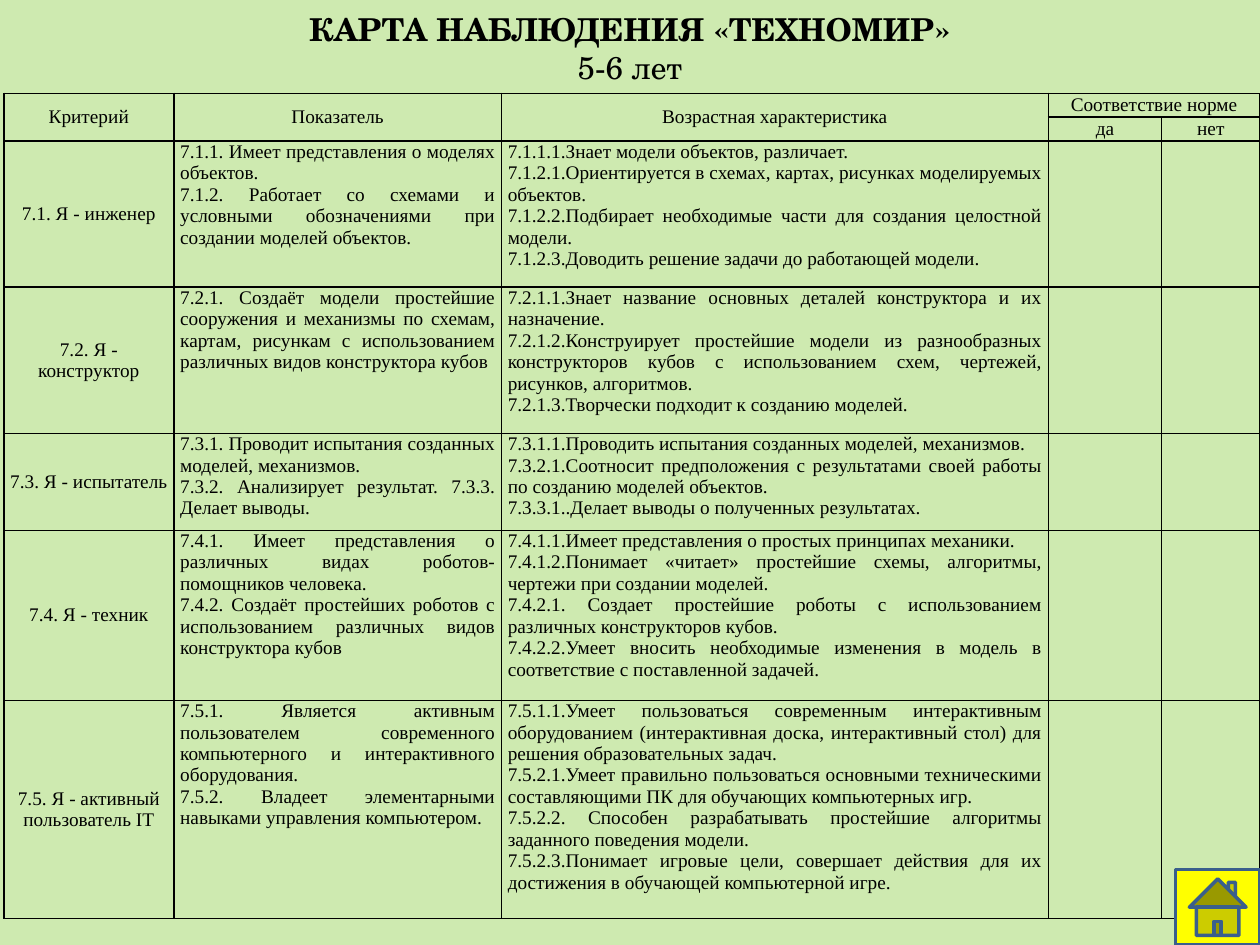
from lxml import etree
from pptx import Presentation
from pptx.dml.color import RGBColor
from pptx.enum.shapes import MSO_SHAPE
from pptx.enum.text import MSO_ANCHOR, PP_ALIGN
from pptx.oxml.ns import qn
from pptx.util import Inches, Pt

CENTER, JUSTIFY = PP_ALIGN.CENTER, PP_ALIGN.JUSTIFY
TOP, MIDDLE = MSO_ANCHOR.TOP, MSO_ANCHOR.MIDDLE
HOME_BUTTON = MSO_SHAPE.ACTION_BUTTON_HOME

TITLE_FONT, TABLE_FONT = "TeX Gyre Schola", "Times New Roman"
BLACK, LIGHT_GREEN, YELLOW, BLUE = "000000", "CEEAB0", "FFFF00", "3A5F8C"

TITLE = ["КАРТА НАБЛЮДЕНИЯ «ТЕХНОМИР»", "5-6 лет"]
HEADINGS = ["Критерий", "Показатель", "Возрастная характеристика"]
NORM, ANSWERS = "Соответствие норме", ["да", "нет"]

# criterion, indicators, age characteristics
CRITERIA = [
    ("7.1. Я - инженер",
     ["7.1.1. Имеет представления о моделях объектов.",
      "7.1.2. Работает со схемами и условными обозначениями при создании "
      "моделей объектов."],
     ["7.1.1.1.Знает модели объектов, различает.",
      "7.1.2.1.Ориентируется в схемах, картах, рисунках моделируемых объектов.",
      "7.1.2.2.Подбирает необходимые части для создания целостной модели.",
      "7.1.2.3.Доводить решение задачи до работающей модели."]),
    ("7.2. Я - конструктор",
     ["7.2.1. Создаёт модели простейшие сооружения и механизмы по схемам, "
      "картам, рисункам с использованием различных видов конструктора кубов"],
     ["7.2.1.1.Знает название основных деталей конструктора и их назначение.",
      "7.2.1.2.Конструирует простейшие модели из разнообразных конструкторов "
      "кубов с использованием схем, чертежей, рисунков, алгоритмов.",
      "7.2.1.3.Творчески подходит к созданию моделей."]),
    ("7.3. Я - испытатель",
     ["7.3.1. Проводит испытания созданных моделей, механизмов.",
      "7.3.2. Анализирует результат. 7.3.3. Делает выводы."],
     ["7.3.1.1.Проводить испытания созданных моделей, механизмов.",
      "7.3.2.1.Соотносит предположения с результатами своей работы по "
      "созданию моделей объектов.",
      "7.3.3.1..Делает выводы о полученных результатах."]),
    ("7.4. Я - техник",
     ["7.4.1. Имеет представления о различных видах роботов-помощников человека.",
      "7.4.2. Создаёт простейших роботов с использованием различных видов "
      "конструктора кубов"],
     ["7.4.1.1.Имеет представления о простых принципах механики.",
      "7.4.1.2.Понимает «читает» простейшие схемы, алгоритмы, чертежи при "
      "создании моделей.",
      "7.4.2.1. Создает простейшие роботы с использованием различных "
      "конструкторов кубов.",
      "7.4.2.2.Умеет вносить необходимые изменения в модель в соответствие "
      "с поставленной задачей."]),
    ("7.5. Я - активный пользователь IT",
     ["7.5.1. Является активным пользователем современного компьютерного и "
      "интерактивного оборудования.",
      "7.5.2. Владеет элементарными навыками управления компьютером."],
     ["7.5.1.1.Умеет пользоваться современным интерактивным оборудованием "
      "(интерактивная доска, интерактивный стол) для решения образовательных "
      "задач.",
      "7.5.2.1.Умеет правильно пользоваться основными техническими "
      "составляющими ПК для обучающих компьютерных игр.",
      "7.5.2.2. Способен разрабатывать простейшие алгоритмы заданного "
      "поведения модели.",
      "7.5.2.3.Понимает игровые цели, совершает действия для их достижения "
      "в обучающей компьютерной игре."]),
]
COLUMN_WIDTHS = [1.35, 2.6, 4.34, 0.9, 0.78]
ROW_HEIGHTS = [0.19, 0.19, 1.16, 1.16, 0.77, 1.35, 1.73]


def color(value):
    return RGBColor.from_string(value)


def write(frame, lines, align, font, size):
    frame.text = "\n".join(lines)
    for paragraph in frame.paragraphs:
        paragraph.alignment = align
        for run in paragraph.runs:
            run.font.name, run.font.size = font, Pt(size)
            run.font.color.rgb = color(BLACK)


def write_cell(cell, lines, align=CENTER, anchor=MIDDLE):
    write(cell.text_frame, lines, align, TABLE_FONT, 11)
    cell.vertical_anchor = anchor


def style_cell(cell):
    """Clear the fill, set the margins and draw a thin border on all sides."""
    cell.margin_left = cell.margin_right = Inches(0.05)
    cell.margin_top = cell.margin_bottom = 0
    properties = cell._tc.get_or_add_tcPr()
    for side in ("a:lnL", "a:lnR", "a:lnT", "a:lnB"):
        border = etree.SubElement(properties, qn(side), w=str(Pt(1)))
        fill = etree.SubElement(border, qn("a:solidFill"))
        etree.SubElement(fill, qn("a:srgbClr"), val=BLACK)
    cell.fill.background()


prs = Presentation()
prs.slide_width, prs.slide_height = Inches(10), Inches(7.5)
slide = prs.slides.add_slide(prs.slide_layouts[6])
slide.background.fill.solid()
slide.background.fill.fore_color.rgb = color(LIGHT_GREEN)

title = slide.shapes.add_textbox(0, Inches(0.03), Inches(10), Inches(0.71)).text_frame
title.word_wrap = True
write(title, TITLE, CENTER, TITLE_FONT, 18)
title.paragraphs[0].runs[0].font.bold = True

table = slide.shapes.add_table(
    len(ROW_HEIGHTS), len(COLUMN_WIDTHS), Inches(0.03), Inches(0.74),
    Inches(sum(COLUMN_WIDTHS)), Inches(sum(ROW_HEIGHTS))).table
table.first_row = table.horz_banding = False
for column, width in zip(table.columns, COLUMN_WIDTHS):
    column.width = Inches(width)
for row, height in zip(table.rows, ROW_HEIGHTS):
    row.height = Inches(height)
for cell in table.iter_cells():
    style_cell(cell)

for col, heading in enumerate(HEADINGS):
    table.cell(0, col).merge(table.cell(1, col))
    write_cell(table.cell(0, col), [heading])
table.cell(0, 3).merge(table.cell(0, 4))
write_cell(table.cell(0, 3), [NORM])
for col, answer in enumerate(ANSWERS, start=3):
    write_cell(table.cell(1, col), [answer])

for row, (criterion, indicators, characteristics) in enumerate(CRITERIA, start=2):
    write_cell(table.cell(row, 0), [criterion])
    write_cell(table.cell(row, 1), indicators, JUSTIFY, TOP)
    write_cell(table.cell(row, 2), characteristics, JUSTIFY, TOP)

home = slide.shapes.add_shape(
    HOME_BUTTON, Inches(9.33), Inches(6.9), Inches(0.67), Inches(0.6))
home.shadow.inherit = False
home.fill.solid()
home.fill.fore_color.rgb = color(YELLOW)
home.line.color.rgb = color(BLUE)
home.line.width = Pt(2)

prs.save("out.pptx")
